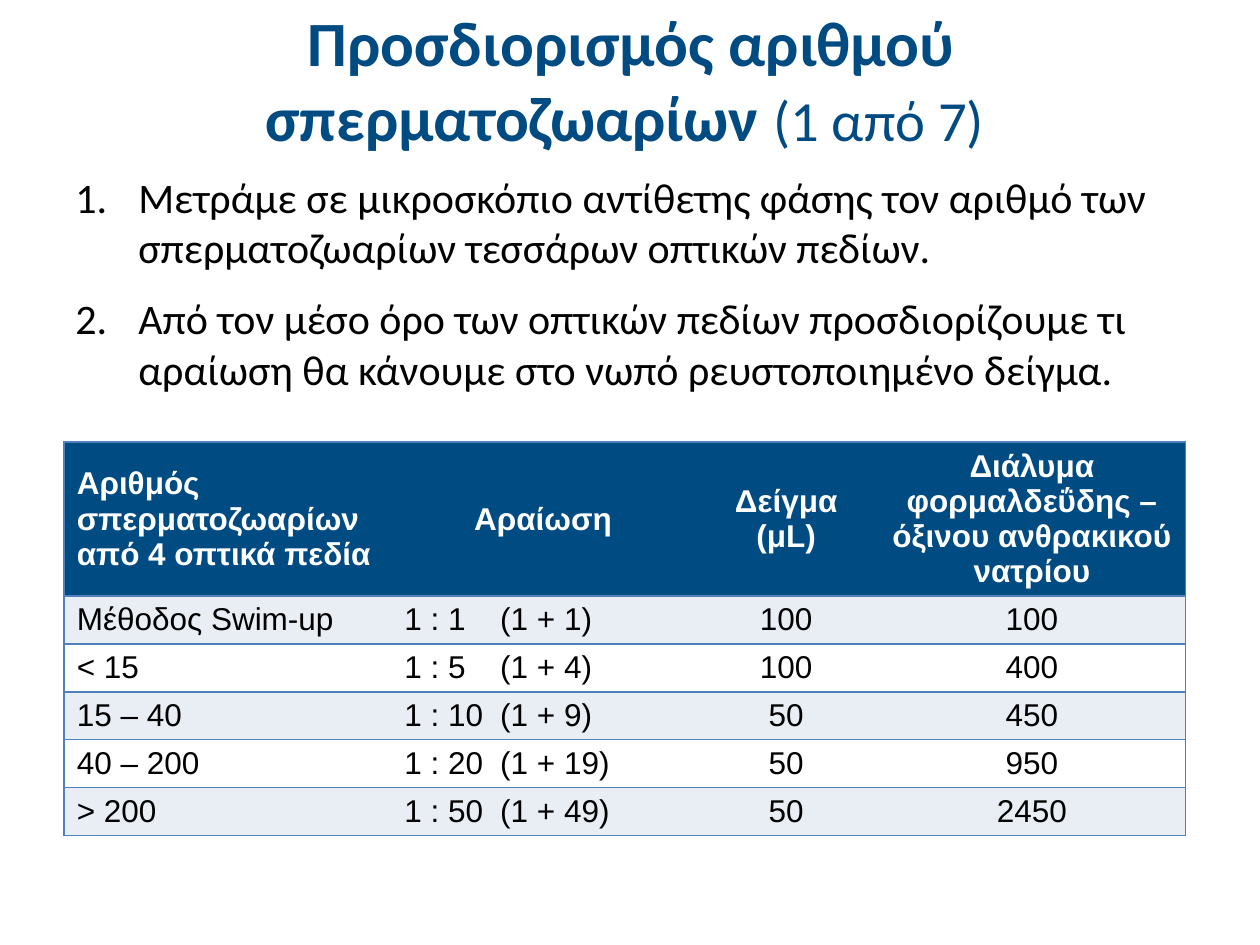
import pptx
import pptx.dml.color
import pptx.enum.text
import pptx.oxml
import pptx.oxml.ns
import pptx.util
from pptx.util import Inches

NAVY, BORDER, BAND, WHITE, BLACK = "004B82", "4F81BD", "E9EDF4", "FFFFFF", "000000"
ALIGN = pptx.enum.text.PP_ALIGN
MIDDLE = pptx.enum.text.MSO_ANCHOR.MIDDLE

TITLE = [("Προσδιορισμός αριθμού σπερματοζωαρίων ", 36, True), ("(1 από 7) ", 32.4, False)]
STEPS = [
    "Μετράμε σε μικροσκόπιο αντίθετης φάσης τον αριθμό των σπερματοζωαρίων τεσσάρων "
    "οπτικών πεδίων.",
    "Από τον μέσο όρο των οπτικών πεδίων προσδιορίζουμε τι αραίωση θα κάνουμε στο νωπό "
    "ρευστοποιημένο δείγμα.",
]
DILUTIONS = [
    ("Αριθμός σπερματοζωαρίων από 4 οπτικά πεδία", "Αραίωση", "Δείγμα (μL)",
     "Διάλυμα φορμαλδεΰδης – όξινου ανθρακικού νατρίου"),
    ("Μέθοδος Swim-up", "1 : 1\t(1 + 1)", "100", "100"),
    ("< 15", "1 : 5\t(1 + 4)", "100", "400"),
    ("15 – 40", "1 : 10\t(1 + 9)", "50", "450"),
    ("40 – 200", "1 : 20\t(1 + 19)", "50", "950"),
    ("> 200", "1 : 50\t(1 + 49)", "50", "2450"),
]
COLUMN_WIDTHS = [2.6, 2.4, 1.46, 2.44]
HEADER_HEIGHT, ROW_HEIGHT = 1.22, 0.38
DILUTION_COLUMN = 1


def rgb(value):
    return pptx.dml.color.RGBColor.from_string(value)


def xml(markup):
    return pptx.oxml.parse_xml(markup.replace(">", f' {pptx.oxml.ns.nsdecls("a")}>', 1))


def style_font(font, name, size, color, bold=False):
    font.name, font.size, font.bold = name, pptx.util.Pt(size), bold
    font.color.rgb = rgb(color)


def add_text_frame(slide, left, top, width, height):
    box = slide.shapes.add_textbox(Inches(left), Inches(top), Inches(width), Inches(height))
    box.text_frame.word_wrap = True
    return box.text_frame


def add_title(slide):
    frame = add_text_frame(slide, 0.51, 0.13, 9, 0.99)
    frame.vertical_anchor = MIDDLE
    heading = frame.paragraphs[0]
    heading.alignment = ALIGN.CENTER
    for text, size, bold in TITLE:
        run = heading.add_run()
        run.text = text
        style_font(run.font, "Calibri", size, NAVY, bold)


def add_numbered_steps(slide):
    frame = add_text_frame(slide, 0.5, 1.31, 9, 1.97)
    for index, text in enumerate(STEPS):
        step = frame.add_paragraph() if index else frame.paragraphs[0]
        step.text = text
        if index:
            step.space_before = pptx.util.Pt(12)
        properties = step._p.get_or_add_pPr()
        properties.set("marL", str(Inches(0.5)))
        properties.set("indent", str(-Inches(0.5)))
        properties.append(xml('<a:buFont typeface="+mj-lt"></a:buFont>'))
        properties.append(xml('<a:buAutoNum type="arabicPeriod"></a:buAutoNum>'))
        style_font(step.font, "Calibri", 24, BLACK)


def set_borders(cell, sides):
    """Draw the given sides (L, R, T, B) and clear the others."""
    properties = cell._tc.get_or_add_tcPr()
    for position, side in enumerate("LRTB"):
        paint = (f'<a:solidFill><a:srgbClr val="{BORDER}"/></a:solidFill>'
                 if side in sides else "<a:noFill/>")
        line = xml(f'<a:ln{side} w="{pptx.util.Pt(1)}">{paint}</a:ln{side}>')
        properties.insert(position, line)


def fill_cell(cell, text, row, column):
    header = row == 0
    cell.fill.solid()
    cell.fill.fore_color.rgb = rgb(NAVY if header else BAND if row % 2 else WHITE)
    last_column = len(COLUMN_WIDTHS) - 1
    set_borders(cell, "TB" + {0: "L", last_column: "R"}.get(column, ""))

    entry = cell.text_frame.paragraphs[0]
    entry.text = text
    if column == DILUTION_COLUMN and not header:
        entry.alignment = ALIGN.JUSTIFY
        entry._p.get_or_add_pPr().append(
            xml(f'<a:tabLst><a:tab pos="{Inches(0.76)}" algn="l"/></a:tabLst>'))
    else:
        entry.alignment = ALIGN.CENTER if column else ALIGN.LEFT
    if header:
        cell.vertical_anchor = MIDDLE
    style_font(entry.font, "Arial", 18, WHITE if header else BLACK, header)


def add_dilution_table(slide):
    heights = [HEADER_HEIGHT] + [ROW_HEIGHT] * (len(DILUTIONS) - 1)
    table = slide.shapes.add_table(
        len(DILUTIONS), len(COLUMN_WIDTHS), Inches(0.51), Inches(3.51),
        Inches(sum(COLUMN_WIDTHS)), Inches(sum(heights))).table
    table.horz_banding = False
    for column, width in zip(table.columns, COLUMN_WIDTHS):
        column.width = Inches(width)
    for row, height in zip(table.rows, heights):
        row.height = Inches(height)
    for row, texts in enumerate(DILUTIONS):
        for column, text in enumerate(texts):
            fill_cell(table.cell(row, column), text, row, column)


def main():
    deck = pptx.Presentation()
    deck.slide_width, deck.slide_height = Inches(10), Inches(7.5)
    slide = deck.slides.add_slide(deck.slide_layouts[6])
    # Dilution table
    add_dilution_table(slide)
    # Heading and procedure
    add_title(slide)
    add_numbered_steps(slide)
    deck.save("out.pptx")


if __name__ == "__main__":
    main()
